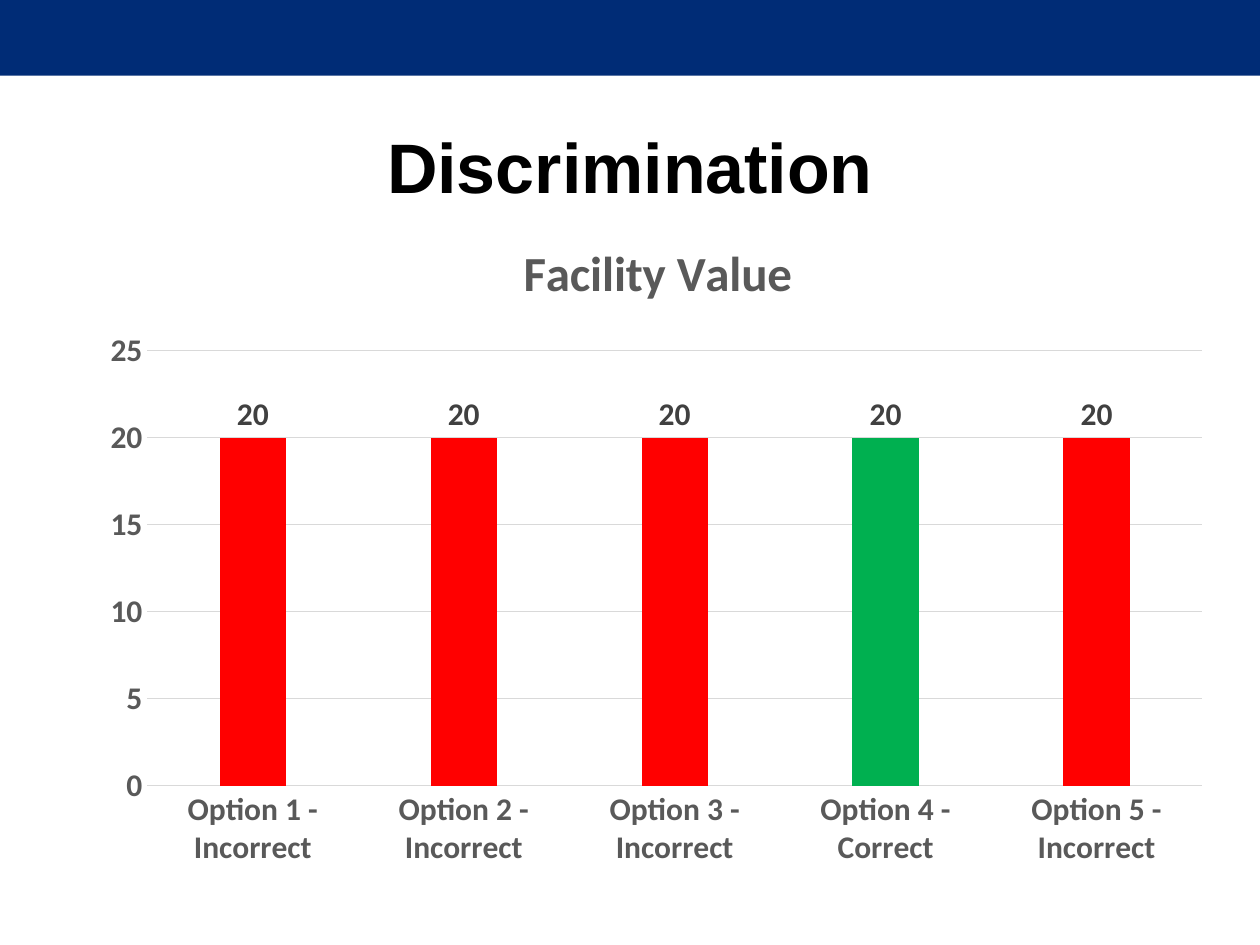
from lxml import etree
from pptx import Presentation
from pptx.chart.data import CategoryChartData
from pptx.dml.color import RGBColor
from pptx.enum.chart import XL_CHART_TYPE, XL_LABEL_POSITION, XL_TICK_MARK
from pptx.enum.shapes import MSO_SHAPE
from pptx.enum.text import MSO_ANCHOR, PP_ALIGN
from pptx.oxml.ns import qn
from pptx.util import Inches, Pt

COLUMNS = XL_CHART_TYPE.COLUMN_CLUSTERED
NO_TICK = XL_TICK_MARK.NONE
OUTSIDE_END = XL_LABEL_POSITION.OUTSIDE_END

NAVY = RGBColor(0x00, 0x2C, 0x76)
BLACK = RGBColor(0x00, 0x00, 0x00)
RED = RGBColor(0xFF, 0x00, 0x00)
GREEN = RGBColor(0x00, 0xB0, 0x50)
DARK_GRAY = RGBColor(0x40, 0x40, 0x40)
GRAY = RGBColor(0x59, 0x59, 0x59)
LIGHT_GRAY = RGBColor(0xD9, 0xD9, 0xD9)

HEADING = "Discrimination"
CHART_TITLE = "Facility Value"
OPTIONS = [
    ("Option 1 - Incorrect", 20),
    ("Option 2 - Incorrect", 20),
    ("Option 3 - Incorrect", 20),
    ("Option 4 - Correct", 20),
    ("Option 5 - Incorrect", 20),
]
CORRECT = 3
# Inner plot area as fractions of the chart
PLOT_AREA = {"x": 0.05, "y": 0.21, "w": 0.93, "h": 0.65}


def style_font(font, size, color, name="Calibri"):
    font.name = name
    font.size = Pt(size)
    font.bold = True
    font.color.rgb = color


def style_line(line):
    line.color.rgb = LIGHT_GRAY
    line.width = Pt(0.75)


def place_plot_area(chart):
    plot_area = chart.element.find(".//" + qn("c:plotArea"))
    layout = plot_area.find(qn("c:layout"))
    if layout is None:
        layout = etree.Element(qn("c:layout"))
        plot_area.insert(0, layout)
    manual = etree.SubElement(layout, qn("c:manualLayout"))
    settings = [("layoutTarget", "inner"), ("xMode", "edge"), ("yMode", "edge")]
    for tag, value in settings + list(PLOT_AREA.items()):
        etree.SubElement(manual, qn("c:" + tag)).set("val", str(value))


def add_heading(slide):
    band = slide.shapes.add_shape(MSO_SHAPE.RECTANGLE, 0, 0, Inches(10), Inches(0.6))
    band.shadow.inherit = False
    band.fill.solid()
    band.fill.fore_color.rgb = NAVY
    band.line.fill.background()

    heading = slide.shapes.add_textbox(Inches(0.5), Inches(0.69), Inches(9), Inches(1.25))
    frame = heading.text_frame
    frame.word_wrap = True
    frame.vertical_anchor = MSO_ANCHOR.MIDDLE
    paragraph = frame.paragraphs[0]
    paragraph.alignment = PP_ALIGN.CENTER
    run = paragraph.add_run()
    run.text = HEADING
    style_font(run.font, 40, BLACK, "Arial")


def add_facility_chart(slide):
    data = CategoryChartData()
    data.categories = [option for option, _ in OPTIONS]
    data.add_series("Series 1", [value for _, value in OPTIONS])
    chart = slide.shapes.add_chart(
        COLUMNS, Inches(0.72), Inches(1.67), Inches(9), Inches(5.31), data
    ).chart
    chart.font.name = "Calibri"
    chart.font.size = Pt(10)
    chart.has_legend = False
    place_plot_area(chart)

    chart.has_title = True
    chart.chart_title.include_in_layout = False
    title_run = chart.chart_title.text_frame.paragraphs[0].add_run()
    title_run.text = CHART_TITLE
    style_font(title_run.font, 28, GRAY)

    for axis in (chart.category_axis, chart.value_axis):
        axis.major_tick_mark = NO_TICK
        axis.minor_tick_mark = NO_TICK
        style_font(axis.tick_labels.font, 18, GRAY)
    style_line(chart.category_axis.format.line)
    values = chart.value_axis
    values.minimum_scale, values.maximum_scale, values.major_unit = 0, 25, 5
    values.format.line.fill.background()
    style_line(values.major_gridlines.format.line)

    plot = chart.plots[0]
    plot.vary_by_categories = False
    plot.gap_width = 219
    plot.overlap = -27
    series = plot.series[0]
    for fill, color in (
        (series.format.fill, RED),
        (series.points[CORRECT].format.fill, GREEN),
    ):
        fill.solid()
        fill.fore_color.rgb = color
    labels = series.data_labels
    labels.show_value = True
    labels.position = OUTSIDE_END
    style_font(labels.font, 18, DARK_GRAY)


def main():
    presentation = Presentation()
    presentation.slide_width = Inches(10)
    presentation.slide_height = Inches(7.5)
    slide = presentation.slides.add_slide(presentation.slide_layouts[6])
    add_heading(slide)
    add_facility_chart(slide)
    presentation.save("out.pptx")


if __name__ == "__main__":
    main()
